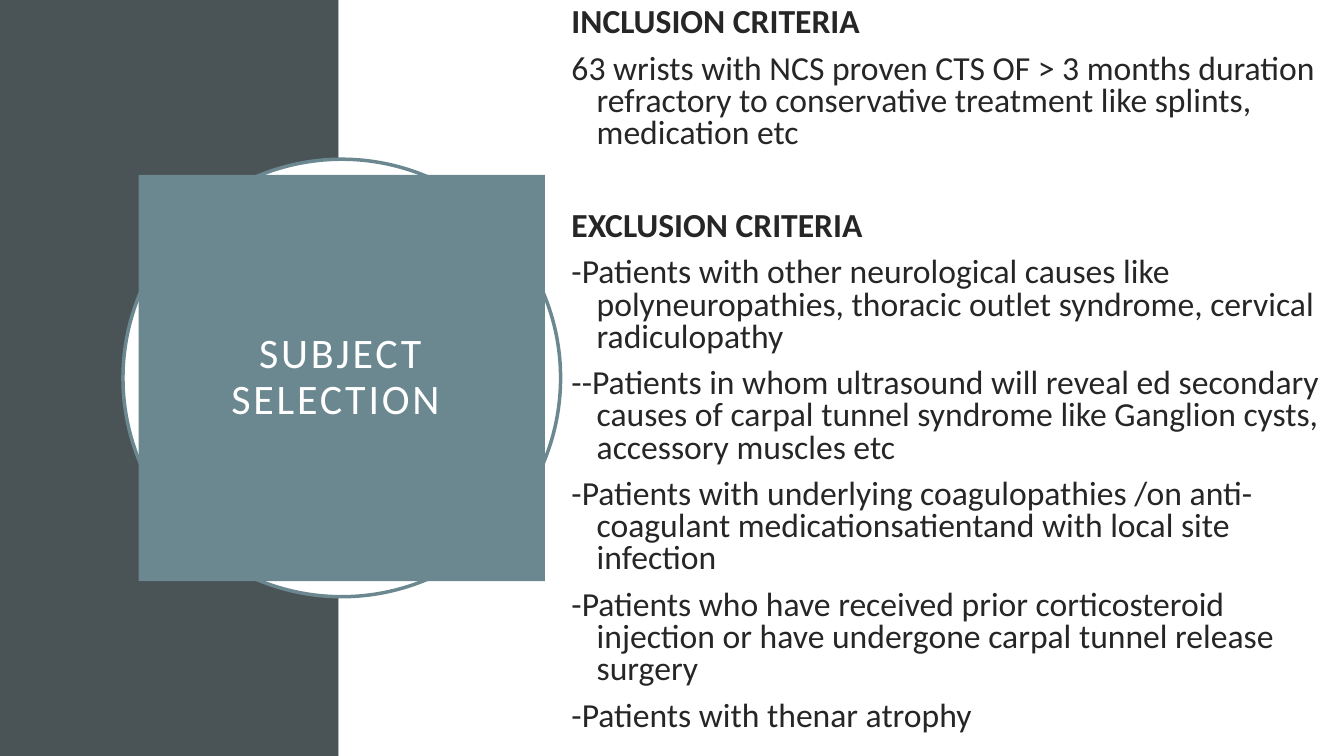
from pptx import Presentation
from pptx.dml.color import RGBColor
from pptx.enum.shapes import MSO_SHAPE
from pptx.enum.text import MSO_ANCHOR, PP_ALIGN
from pptx.util import Inches, Pt

TITLE = "SUBJECT SELECTION "
CRITERIA = [
    ("INCLUSION CRITERIA", [
        "63 wrists with NCS proven CTS OF > 3 months duration refractory to "
        "conservative treatment like splints, medication etc",
    ]),
    ("EXCLUSION CRITERIA", [
        "-Patients with other neurological causes like polyneuropathies, "
        "thoracic outlet syndrome, cervical radiculopathy",
        "--Patients in whom ultrasound will reveal ed secondary causes of "
        "carpal tunnel syndrome like Ganglion cysts, accessory muscles etc",
        "-Patients with underlying coagulopathies /on anti-coagulant "
        "medicationsatientand with local site infection",
        "-Patients who have received prior corticosteroid injection or have "
        "undergone carpal tunnel release surgery",
        "-Patients with thenar atrophy",
    ]),
]
COLORS = {"band": "4A5356", "accent": "6B8891", "white": "FFFFFF", "text": "262626"}
FONT = "Calibri"
WIDTH, HEIGHT = 13.33, 7.5
BAND_WIDTH = 3.36
CENTER_X, CENTER_Y = 3.39, 3.75
RING_SIZE, PANEL_SIZE = 4.34, 4.03
GAP, SECTION_GAP = 10, 43.4


def color(name):
    return RGBColor.from_string(COLORS[name])


def add_filled(slide, kind, left, top, width, height, fill):
    shape = slide.shapes.add_shape(
        kind, Inches(left), Inches(top), Inches(width), Inches(height))
    shape.shadow.inherit = False
    shape.fill.solid()
    shape.fill.fore_color.rgb = color(fill)
    shape.line.fill.background()
    return shape


def add_centered(slide, kind, size, fill):
    return add_filled(slide, kind, CENTER_X - size / 2, CENTER_Y - size / 2,
                      size, size, fill)


def style_run(paragraph, size, ink, bold=False):
    run = paragraph.runs[0]
    run.font.name = FONT
    run.font.size = Pt(size)
    run.font.bold = bold
    run.font.color.rgb = color(ink)
    return run


def add_title_panel(slide):
    ring = add_centered(slide, MSO_SHAPE.OVAL, RING_SIZE, "white")
    ring.line.color.rgb = color("accent")
    ring.line.width = Pt(2.5)

    panel = add_centered(slide, MSO_SHAPE.RECTANGLE, PANEL_SIZE, "accent")
    frame = panel.text_frame
    frame.word_wrap = True
    frame.vertical_anchor = MSO_ANCHOR.MIDDLE
    frame.margin_left = frame.margin_right = Inches(0.2)
    frame.margin_top = frame.margin_bottom = Inches(0.2)
    frame.text = TITLE
    title = frame.paragraphs[0]
    title.alignment = PP_ALIGN.CENTER
    title.line_spacing = 0.9
    run = style_run(title, 30, "white")
    run.font._element.set("spc", "200")


def add_criteria(slide):
    box = slide.shapes.add_textbox(
        Inches(5.57), Inches(0.03), Inches(7.76), Inches(7.45))
    frame = box.text_frame
    frame.word_wrap = True
    lines = []
    for number, (heading, items) in enumerate(CRITERIA):
        lines.append((heading, True, SECTION_GAP if number else GAP))
        lines += [(item, False, GAP) for item in items]
    frame.text = "\n".join(text for text, _, _ in lines)
    for paragraph, (_, bold, gap) in zip(frame.paragraphs, lines):
        paragraph.line_spacing = 0.8
        paragraph.space_before = Pt(gap)
        indents = paragraph._p.get_or_add_pPr()
        indents.set("marL", str(Inches(0.25)))
        indents.set("indent", str(Inches(-0.25)))
        style_run(paragraph, 24, "text", bold)


def main():
    deck = Presentation()
    deck.slide_width, deck.slide_height = Inches(WIDTH), Inches(HEIGHT)
    slide = deck.slides.add_slide(deck.slide_layouts[6])
    add_filled(slide, MSO_SHAPE.RECTANGLE, 0, 0, BAND_WIDTH, HEIGHT, "band")
    add_filled(slide, MSO_SHAPE.RECTANGLE, BAND_WIDTH, 0,
               WIDTH - BAND_WIDTH, HEIGHT, "white")
    add_title_panel(slide)
    add_criteria(slide)
    deck.save("out.pptx")


if __name__ == "__main__":
    main()
